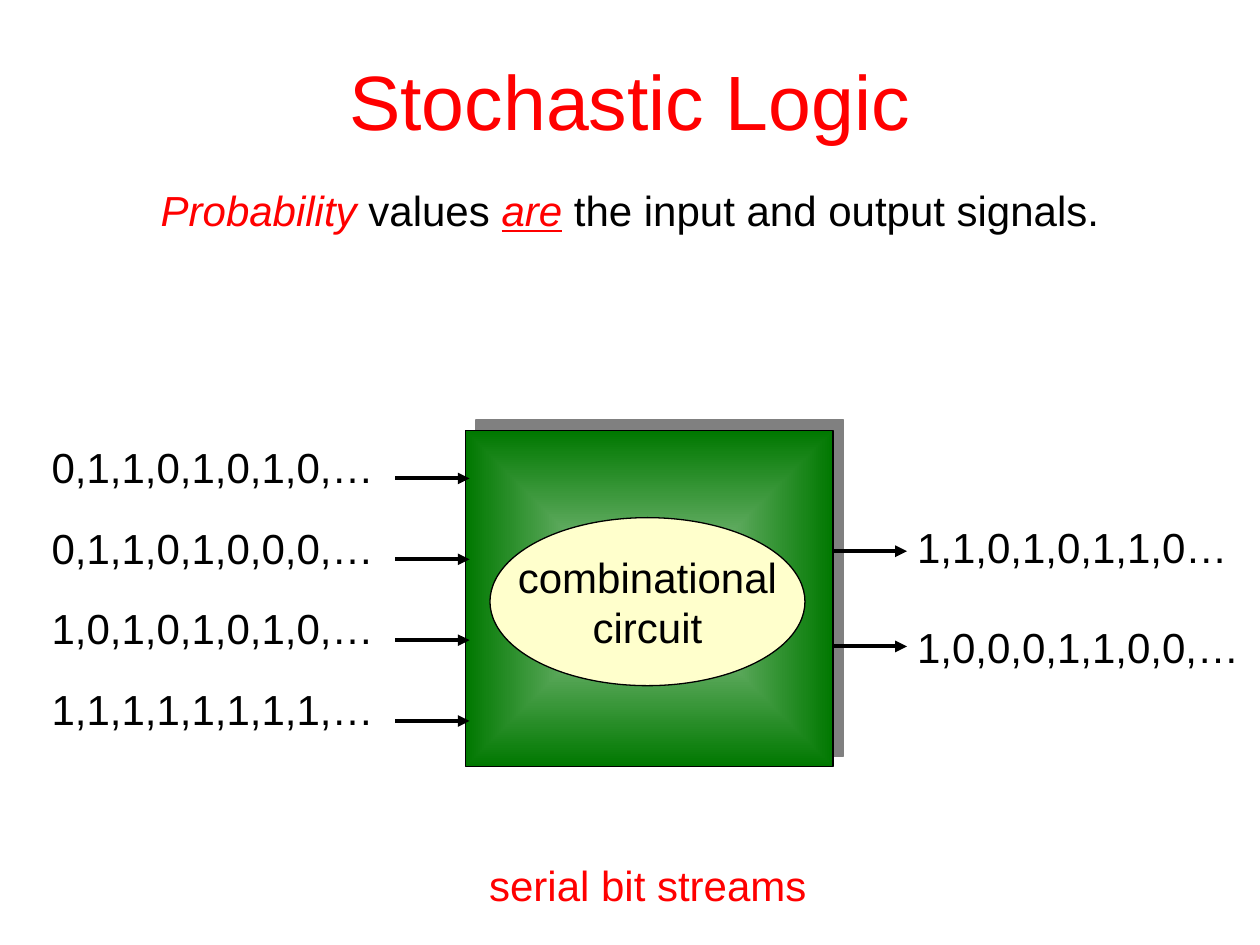
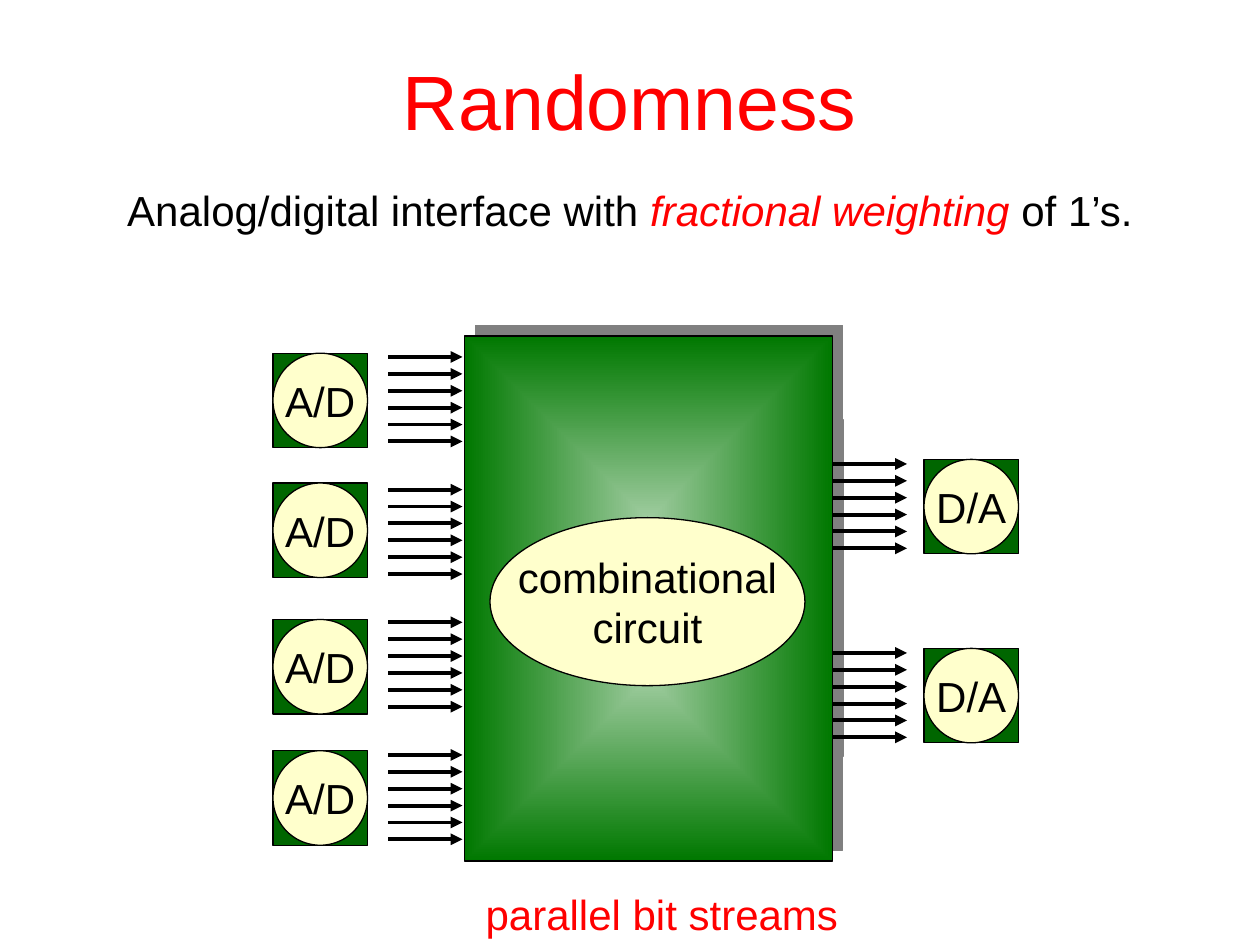
from lxml import etree
from pptx import Presentation
from pptx.dml.color import RGBColor
from pptx.enum.shapes import MSO_CONNECTOR, MSO_SHAPE
from pptx.enum.text import MSO_ANCHOR, MSO_AUTO_SIZE, PP_ALIGN
from pptx.oxml.ns import qn
from pptx.util import Pt

RECT, OVAL = MSO_SHAPE.RECTANGLE, MSO_SHAPE.OVAL
LEFT, MID, RIGHT = PP_ALIGN.LEFT, PP_ALIGN.CENTER, PP_ALIGN.RIGHT
CENTRE, TOP = MSO_ANCHOR.MIDDLE, MSO_ANCHOR.TOP
GROW, LINE = MSO_AUTO_SIZE.SHAPE_TO_FIT_TEXT, MSO_CONNECTOR.STRAIGHT

FONT = "Arial"
HEX = {
    "red": "FF0000",
    "black": "000000",
    "cream": "FFFFCC",
    "green": "006600",
    "glow": "9FCC9F",
    "edge": "007800",
    "shade": "808080",
}

BOX_X, BOX_W = 266, 210
ARROW = 42.3
OUT_X = BOX_X + BOX_W
BITS_W = 199
CHIP = 54
WIRES, WIRE_GAP = 6, 9.65


def rgb(name):
    return RGBColor.from_string(HEX[name])


def sub(node, tag, **attrs):
    return etree.SubElement(node, qn(tag), attrs)


def write(frame, runs, size=24, align=MID, anchor=TOP, wrap=False):
    frame.word_wrap = wrap
    frame.vertical_anchor = anchor
    para = frame.paragraphs[0]
    para.alignment = align
    for text, color, *marks in runs:
        if text == "\n":
            para.add_line_break()
            continue
        run = para.add_run()
        run.text = text
        font = run.font
        font.name, font.size = FONT, Pt(size)
        font.color.rgb = rgb(color)
        font.italic = "i" in marks
        font.underline = "u" in marks
    return para


def add_text(slide, x, y, w, h):
    return slide.shapes.add_textbox(Pt(x), Pt(y), Pt(w), Pt(h)).text_frame


def add_head(slide, title, runs):
    write(add_text(slide, 36, 12, 648, 90), [(title, "red")],
          size=44, anchor=CENTRE, wrap=True)
    para = write(add_text(slide, 0, 102, 720, 41), runs, wrap=True)
    para.space_before = Pt(4.8)


def add_label(slide, x, y, w, text, color="black", align=LEFT):
    frame = add_text(slide, x, y, w, 36)
    write(frame, [(text, color)], align=align)
    frame.auto_size = GROW


def add_form(slide, kind, x, y, w, h, fill=None):
    form = slide.shapes.add_shape(kind, Pt(x), Pt(y), Pt(w), Pt(h))
    form.shadow.inherit = False
    form.line.color.rgb = rgb("black")
    form.line.width = Pt(0.75)
    if fill:
        form.fill.solid()
        form.fill.fore_color.rgb = rgb(fill)
    return form


def add_box(slide, x, y, h):
    box = add_form(slide, RECT, x, y, BOX_W, h)
    box.fill.gradient()
    for stop, name, pos in zip(box.fill.gradient_stops, ("glow", "edge"), (0, 1)):
        stop.color.rgb = rgb(name)
        stop.position = pos
    props = box.element.spPr
    grad = props.find(qn("a:gradFill"))
    grad.remove(grad.find(qn("a:lin")))
    focus = sub(grad, "a:path", path="shape")
    sub(focus, "a:fillToRect", l="50000", t="50000", r="50000", b="50000")
    shade = sub(props.find(qn("a:effectLst")), "a:outerShdw", blurRad="0",
                dist=str(Pt(8.5)), dir=str(315 * 60000), algn="ctr",
                rotWithShape="0")
    sub(shade, "a:srgbClr", val=HEX["shade"])


def add_core(slide):
    core = add_form(slide, OVAL, 280, 295.8, 180, 96, "cream")
    runs = [("combinational", "black"), ("\n", "black"), ("circuit", "black")]
    write(core.text_frame, runs, anchor=CENTRE)


def add_arrow(slide, x, y):
    arrow = slide.shapes.add_connector(LINE, Pt(x), Pt(y), Pt(x + ARROW), Pt(y))
    arrow.line.color.rgb = rgb("black")
    arrow.line.width = Pt(2.25)
    props = arrow.element.spPr
    sub(props.find(qn("a:ln")), "a:tailEnd", type="triangle")
    sub(props, "a:effectLst")


def add_bus(slide, x, y):
    for i in range(WIRES):
        add_arrow(slide, x, y + i * WIRE_GAP)


def add_chip(slide, x, y, text):
    add_form(slide, RECT, x, y, CHIP, CHIP, "green")
    disc = add_form(slide, OVAL, x, y, CHIP, CHIP, "cream")
    write(disc.text_frame, [(text, "black")], anchor=CENTRE)


def draw_logic(slide):
    add_head(slide, "Stochastic Logic", [
        ("Probability ", "red", "i"), ("values ", "black"),
        ("are", "red", "i", "u"),
        (" the input and output signals.", "black")])
    add_box(slide, BOX_X, 246, 192)
    add_core(slide)
    ins = ["0,1,1,0,1,0,1,0,…", "0,1,1,0,1,0,0,0,…",
           "1,0,1,0,1,0,1,0,…", "1,1,1,1,1,1,1,1,…"]
    for i, bits in enumerate(ins):
        add_label(slide, 22.4, 248.8 + i * 46.1, BITS_W, bits)
        add_arrow(slide, 226, 273.4 + i * 46.2)
    outs = ["1,1,0,1,0,1,1,0…", "1,0,0,0,1,1,0,0,…"]
    for i, bits in enumerate(outs):
        add_label(slide, 517, 294.2 + i * 57.2, BITS_W, bits)
        add_arrow(slide, OUT_X, 315 + i * 54.4)
    add_label(slide, 272, 487.5, 196, "serial bit streams", "red", RIGHT)


def draw_random(slide):
    add_box(slide, BOX_X, 246, 192)
    add_box(slide, BOX_X - 0.4, 192, 300)
    add_core(slide)
    add_head(slide, "Randomness", [
        ("Analog/digital interface with ", "black"),
        ("fractional weighting", "red", "i"), (" of 1’s.", "black")])
    add_label(slide, 270, 504, 216, "parallel bit streams", "red", RIGHT)
    for i, y in enumerate((201.8, 276, 354, 429)):
        add_bus(slide, 222, 204 + i * 75.8)
        add_chip(slide, 156, y, "A/D")
    for i in range(2):
        add_bus(slide, OUT_X, 265.1 + i * 108)
        add_chip(slide, 528, 262.5 + i * 108, "D/A")


def main():
    deck = Presentation()
    deck.slide_width, deck.slide_height = Pt(720), Pt(540)
    blank = deck.slide_layouts[6]
    for draw in (draw_logic, draw_random):
        draw(deck.slides.add_slide(blank))
    deck.save("out.pptx")


if __name__ == "__main__":
    main()
